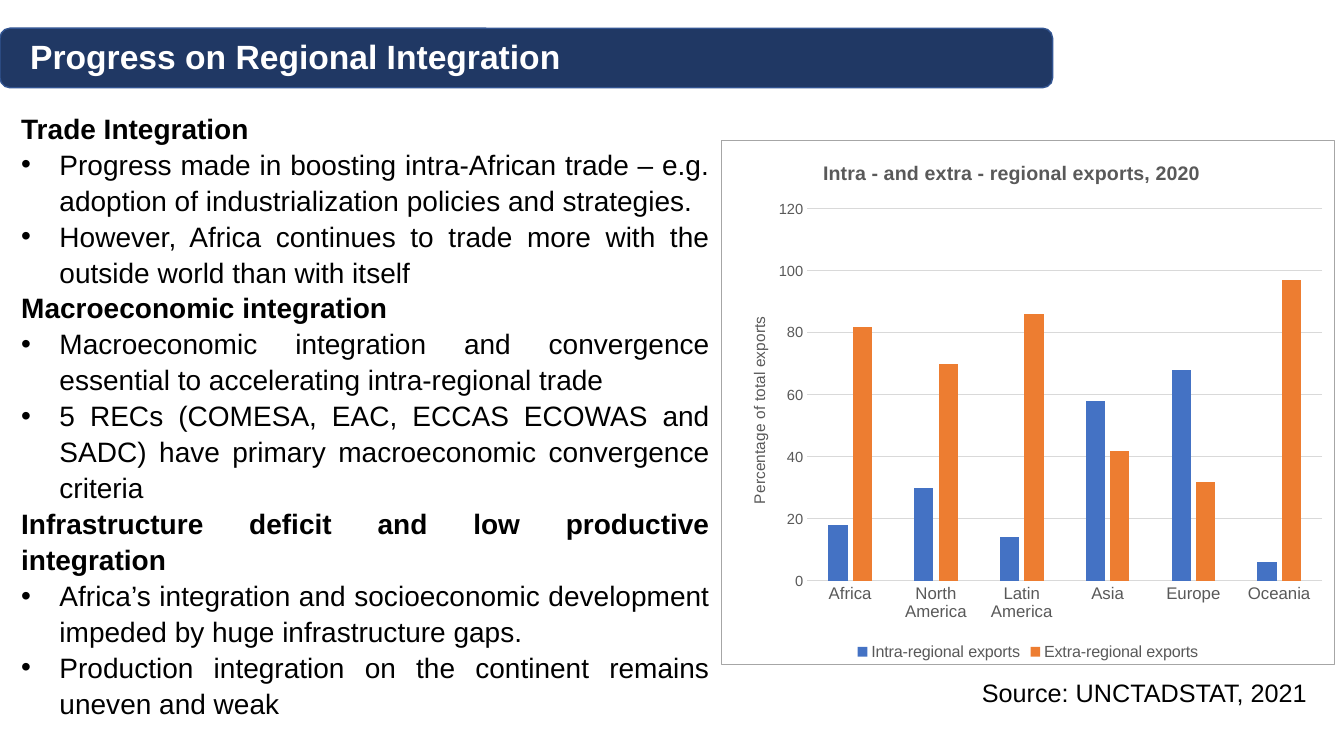
from lxml import etree
from pptx import Presentation
from pptx import util as u
from pptx.chart import data
from pptx.dml.color import RGBColor
from pptx.enum import chart as ch, shapes, text
from pptx.oxml import parse_xml
from pptx.oxml.ns import nsdecls, qn

NAVY = RGBColor(0x20, 0x38, 0x64)
NAVY_EDGE = RGBColor(0x32, 0x54, 0x91)
WHITE = RGBColor(0xFF, 0xFF, 0xFF)
BLACK = RGBColor(0, 0, 0)
GREY = RGBColor(0x59, 0x59, 0x59)
GRID = RGBColor(0xD9, 0xD9, 0xD9)
BLUE = RGBColor(0x44, 0x72, 0xC4)
ORANGE = RGBColor(0xED, 0x7D, 0x31)


def style(font, size, color, bold=False):
    font.name = "Arial"
    font.size = u.Pt(size)
    font.color.rgb = color
    font.bold = bold


def set_layout(parent, index, **settings):
    for old in parent.findall(qn("c:layout")):
        parent.remove(old)
    layout = parse_xml(f"<c:layout {nsdecls('c')}><c:manualLayout/></c:layout>")
    for tag, value in settings.items():
        etree.SubElement(layout[0], qn(f"c:{tag}")).set("val", str(value))
    parent.insert(index, layout)


prs = Presentation()
prs.slide_width, prs.slide_height = u.Inches(13.33), u.Inches(7.5)
slide = prs.slides.add_slide(prs.slide_layouts[1])

banner = slide.shapes.add_shape(
    shapes.MSO_SHAPE.ROUNDED_RECTANGLE, 0, u.Inches(0.28), u.Inches(10.44), u.Inches(0.59))
banner.shadow.inherit = False
banner.fill.solid()
banner.fill.fore_color.rgb = NAVY
banner.line.color.rgb = NAVY_EDGE
banner.line.width = u.Pt(1)
slide.shapes._spTree.insert(2, banner._element)

heading = slide.shapes.title
heading.left, heading.top, heading.width, heading.height = map(u.Inches, (0.2, 0.31, 9.07, 0.5))
heading.text_frame.text = "Progress on Regional Integration"
heading.text_frame.auto_size = text.MSO_AUTO_SIZE.NONE
heading.text_frame.vertical_anchor = text.MSO_ANCHOR.MIDDLE
heading.text_frame.paragraphs[0].alignment = text.PP_ALIGN.LEFT
style(heading.text_frame.paragraphs[0].font, 24, WHITE, True)

sections = [
    ("Trade Integration", [
        "Progress made in boosting intra-African trade – e.g. adoption of industrialization policies and strategies.",
        "However, Africa continues to trade more with the outside world than with itself"]),
    ("Macroeconomic integration", [
        "Macroeconomic integration and convergence essential to accelerating intra-regional trade",
        "5 RECs (COMESA, EAC, ECCAS ECOWAS and SADC) have primary macroeconomic convergence criteria"]),
    ("Infrastructure deficit and low productive integration", [
        "Africa’s integration and socioeconomic development impeded by huge infrastructure gaps.",
        "Production integration on the continent remains uneven and weak"]),
]
lines = [(line, line == topic) for topic, points in sections for line in [topic, *points]]

progress = slide.placeholders[1]
progress.left, progress.top, progress.width, progress.height = map(u.Inches, (0.11, 1.03, 7.03, 6.07))
frame = progress.text_frame
frame.auto_size = text.MSO_AUTO_SIZE.NONE
frame.vertical_anchor = text.MSO_ANCHOR.TOP
for number, (line, is_topic) in enumerate(lines):
    paragraph = frame.add_paragraph() if number else frame.paragraphs[0]
    paragraph.text = line
    paragraph.alignment = text.PP_ALIGN.JUSTIFY
    paragraph.line_spacing = 1.07
    paragraph.space_before = paragraph.space_after = u.Pt(0)
    indent = 0 if is_topic else u.Inches(0.38)
    props = paragraph._p.get_or_add_pPr()
    props.set("marL", str(indent))
    props.set("indent", str(-indent))
    if is_topic:
        etree.SubElement(props, qn("a:buNone"))
    else:
        etree.SubElement(props, qn("a:buFont")).set("typeface", "Arial")
        etree.SubElement(props, qn("a:buChar")).set("char", "•")
    tab = etree.SubElement(etree.SubElement(props, qn("a:tabLst")), qn("a:tab"))
    tab.set("pos", str(u.Inches(0.5)))
    tab.set("algn", "l")
    style(paragraph.font, 20, BLACK, is_topic)

exports = data.CategoryChartData()
exports.categories = ["Africa", "North America", "Latin America", "Asia", "Europe", "Oceania"]
exports.add_series("Intra-regional exports", (18, 30, 14, 58, 68, 6))
exports.add_series("Extra-regional exports", (82, 70, 86, 42, 32, 97))
chart = slide.shapes.add_chart(
    ch.XL_CHART_TYPE.COLUMN_CLUSTERED, u.Inches(7.15), u.Inches(1.39),
    u.Inches(6.09), u.Inches(5.21), exports).chart
style(chart.font, 10, BLACK)
chart.font.name = "Calibri"

chart.has_title = True
chart_title = chart.chart_title
chart_title.text_frame.text = "Intra - and extra - regional exports, 2020"
style(chart_title.text_frame.paragraphs[0].font, 14, GREY, True)
chart_title.include_in_layout = False
set_layout(chart_title._element, 1, xMode="edge", yMode="edge", x=0.16, y=0.03)

columns = chart.plots[0]
columns.gap_width, columns.overlap = 219, -27
columns.vary_by_categories = False
for series, color in zip(columns.series, (BLUE, ORANGE)):
    series.format.fill.solid()
    series.format.fill.fore_color.rgb = color

regions = chart.category_axis
regions.major_tick_mark = ch.XL_TICK_MARK.NONE
regions.format.line.color.rgb = GRID
regions.format.line.width = u.Pt(0.75)
style(regions.tick_labels.font, 12, GREY)

share = chart.value_axis
share.minimum_scale, share.maximum_scale, share.major_unit = 0, 120, 20
share.major_tick_mark = ch.XL_TICK_MARK.NONE
share.format.line.fill.background()
share.major_gridlines.format.line.color.rgb = GRID
share.major_gridlines.format.line.width = u.Pt(0.75)
style(share.tick_labels.font, 10.5, GREY)
share.has_title = True
share.axis_title.text_frame.text = "Percentage of total exports"
style(share.axis_title.text_frame.paragraphs[0].font, 11, GREY)
set_layout(share.axis_title._element, 1, xMode="edge", yMode="edge", x=0.04, y=0.33)

chart.has_legend = True
chart.legend.position = ch.XL_LEGEND_POSITION.BOTTOM
chart.legend.include_in_layout = False
style(chart.legend.font, 11.5, GREY)

chart_xml = chart._chartSpace.find(qn("c:chart"))
set_layout(chart_xml.find(qn("c:plotArea")), 0, layoutTarget="inner",
           xMode="edge", yMode="edge", x=0.14, y=0.13, w=0.84, h=0.71)
chart_xml.addnext(parse_xml(
    f'<c:spPr {nsdecls("c", "a")}><a:solidFill><a:srgbClr val="FFFFFF"/></a:solidFill>'
    f'<a:ln w="{u.Pt(0.75)}"><a:solidFill><a:srgbClr val="A6A6A6"/></a:solidFill></a:ln></c:spPr>'))

source = slide.shapes.add_textbox(u.Inches(9.64), u.Inches(6.67), u.Inches(3.48), u.Inches(0.4))
source.text_frame.word_wrap = True
source.text_frame.text = "Source: UNCTADSTAT, 2021"
style(source.text_frame.paragraphs[0].font, 18, BLACK)

prs.save("out.pptx")
